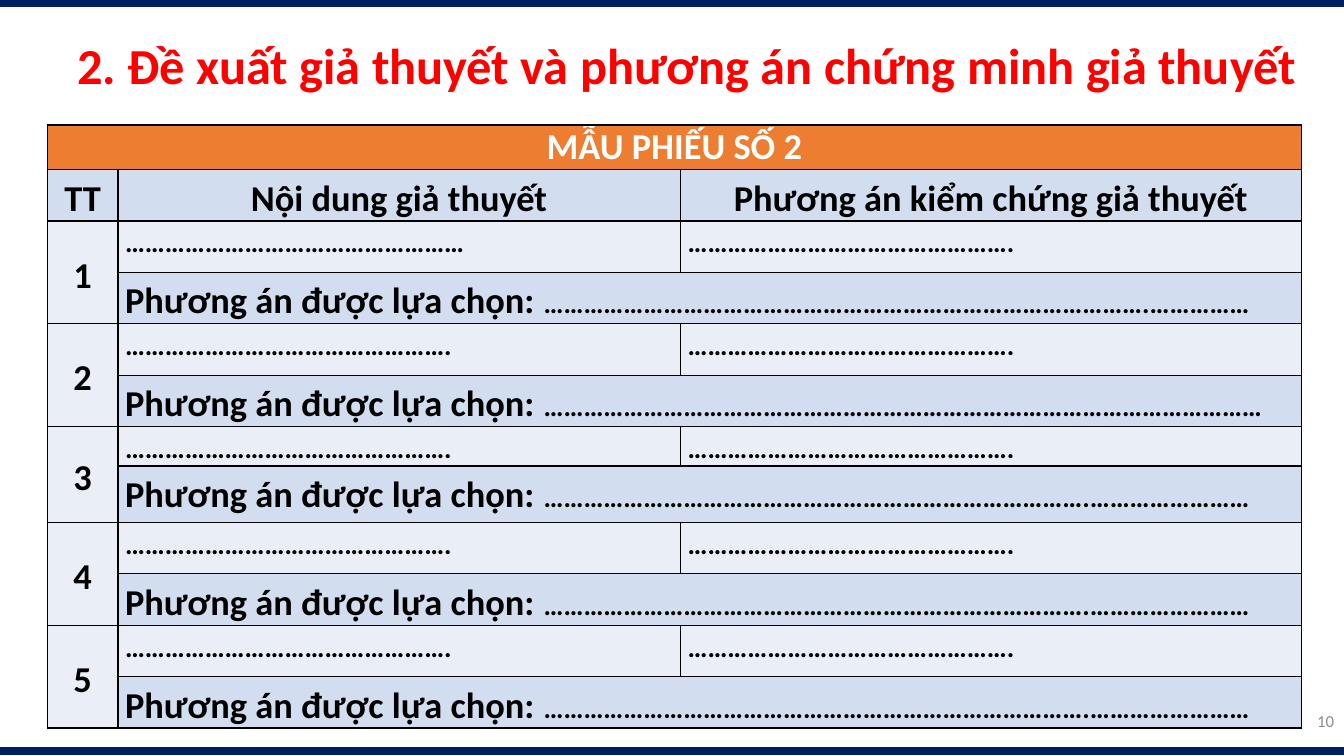
from dataclasses import dataclass

from lxml.etree import SubElement
from pptx import Presentation
from pptx.dml.color import RGBColor
from pptx.enum.shapes import MSO_CONNECTOR as Connector
from pptx.enum.text import MSO_ANCHOR as Anchor, MSO_AUTO_SIZE as AutoSize, PP_ALIGN as Align
from pptx.oxml import parse_xml
from pptx.oxml.ns import nsdecls, qn
from pptx.util import Inches, Pt

NAVY = RGBColor(0x00, 0x20, 0x60)
RED = RGBColor(0xFF, 0x00, 0x00)
ORANGE = RGBColor(0xED, 0x7D, 0x31)
HEADER_BLUE = RGBColor(0xD2, 0xDE, 0xEF)
PALE_BLUE = RGBColor(0xEA, 0xEF, 0xF7)
GRAY = RGBColor(0x8C, 0x8C, 0x8C)
BLACK = RGBColor(0x00, 0x00, 0x00)
WHITE = RGBColor(0xFF, 0xFF, 0xFF)

SLIDE_WIDTH, SLIDE_HEIGHT = 13.33, 7.5
TABLE_LEFT, TABLE_TOP = 0.47, 1.24
COLUMN_WIDTHS = (0.7, 5.58, 6.16)
TABLE_RIGHT = TABLE_LEFT + sum(COLUMN_WIDTHS)
ROW_HEIGHTS = (0.44, *[0.51] * 5, 0.39, 0.56, *[0.51] * 4)
HEADERS = ("TT", "Nội dung giả thuyết", "Phương án kiểm chứng giả thuyết")
CHOICE_LABEL = "Phương án được lựa chọn: "
BLANK = "…………………………………………."
CHOICE_BLANK = "……………………………………………………………………….……………………"


@dataclass(frozen=True)
class Run:
    text: str
    size: float = 26
    color: RGBColor = BLACK
    bold: bool = True


@dataclass(frozen=True)
class Hypothesis:
    content: str = BLANK
    choice: str = CHOICE_BLANK


HYPOTHESES = (
    Hypothesis("……………………………………………",
               "……………………………………………………………………………….……………"),
    Hypothesis(choice="………………………………………………………………………………………………"),
    Hypothesis(),
    Hypothesis(),
    Hypothesis(),
)


def write(text_frame, runs: list[Run], align: Align, spacing: float = 1.0) -> None:
    paragraph = text_frame.paragraphs[0]
    paragraph.alignment = align
    paragraph.line_spacing = spacing
    for item in runs:
        run = paragraph.add_run()
        run.text = item.text
        font_format = {"name": "Calibri", "size": Pt(item.size), "bold": item.bold}
        for name, value in font_format.items():
            setattr(run.font, name, value)
        run.font.color.rgb = item.color


def place(shape, left: float, top: float, width: float, height: float) -> None:
    box = {"left": left, "top": top, "width": width, "height": height}
    for name, value in box.items():
        setattr(shape, name, Inches(value))
    frame_format = {"word_wrap": True, "auto_size": AutoSize.NONE,
                    "vertical_anchor": Anchor.MIDDLE}
    for name, value in frame_format.items():
        setattr(shape.text_frame, name, value)


def add_edge_line(slide, y: float) -> None:
    line = slide.shapes.add_connector(
        Connector.STRAIGHT, Inches(0), Inches(y), Inches(SLIDE_WIDTH), Inches(y))
    line.line.color.rgb = NAVY
    line.line.width = Pt(6)
    SubElement(line._element.spPr, qn("a:effectLst"))


def style_cell(cell, fill: RGBColor) -> None:
    """Fill the cell, set its margins and draw black borders."""
    cell.fill.solid()
    cell.fill.fore_color.rgb = fill
    cell_format = {"margin_left": Inches(0.07), "margin_right": Inches(0.07),
                   "margin_top": 0, "margin_bottom": 0}
    for name, value in cell_format.items():
        setattr(cell, name, value)
    properties = cell._tc.get_or_add_tcPr()
    for index, side in enumerate(("lnL", "lnR", "lnT", "lnB")):
        properties.insert(index, parse_xml(
            f'<a:{side} {nsdecls("a")} w="{Pt(1)}"><a:solidFill>'
            f'<a:srgbClr val="{BLACK}"/></a:solidFill></a:{side}>'))


def write_centered(cell, text: str) -> None:
    cell.vertical_anchor = Anchor.MIDDLE
    write(cell.text_frame, [Run(text)], Align.CENTER, 1.15)


def row_fill(row: int) -> RGBColor:
    if row == 0:
        return ORANGE
    return HEADER_BLUE if row % 2 else PALE_BLUE


def add_worksheet(slide) -> None:
    table = slide.shapes.add_table(
        len(ROW_HEIGHTS), len(COLUMN_WIDTHS), Inches(TABLE_LEFT), Inches(TABLE_TOP),
        Inches(sum(COLUMN_WIDTHS)), Inches(sum(ROW_HEIGHTS))).table
    table.first_row = table.horz_banding = False
    for column, width in zip(table.columns, COLUMN_WIDTHS):
        column.width = Inches(width)
    for index, height in enumerate(ROW_HEIGHTS):
        table.rows[index].height = Inches(height)
        for column in range(len(COLUMN_WIDTHS)):
            number_cell = column == 0 and index > 1
            style_cell(table.cell(index, column),
                       PALE_BLUE if number_cell else row_fill(index))

    table.cell(0, 0).merge(table.cell(0, 2))
    write(table.cell(0, 0).text_frame, [Run("MẪU PHIẾU SỐ 2", color=WHITE)], Align.CENTER)
    for column, header in enumerate(HEADERS):
        write_centered(table.cell(1, column), header)

    for number, hypothesis in enumerate(HYPOTHESES, start=1):
        top = 2 * number
        table.cell(top, 0).merge(table.cell(top + 1, 0))
        table.cell(top + 1, 1).merge(table.cell(top + 1, 2))
        write_centered(table.cell(top, 0), str(number))
        answers = (
            (top, 1, [Run(hypothesis.content, 20)]),
            (top, 2, [Run(BLANK, 20)]),
            (top + 1, 1, [Run(CHOICE_LABEL), Run(hypothesis.choice, 20)]),
        )
        for row, column, runs in answers:
            write(table.cell(row, column).text_frame, runs, Align.JUSTIFY, 1.15)


def main() -> None:
    presentation = Presentation()
    presentation.slide_width = Inches(SLIDE_WIDTH)
    presentation.slide_height = Inches(SLIDE_HEIGHT)
    slide = presentation.slides.add_slide(presentation.slide_layouts[5])

    for y in (7.45, 0.03):
        add_edge_line(slide, y)

    title = slide.shapes.title
    place(title, 0.3, 0.32, 13.03, 0.71)
    heading = "2. Đề xuất giả thuyết và phương án chứng minh giả thuyết"
    write(title.text_frame, [Run(heading, 36, RED)], Align.CENTER, 0.9)

    add_worksheet(slide)

    page_number = slide.shapes.add_textbox(0, 0, 0, 0)
    place(page_number, TABLE_RIGHT, 6.95, SLIDE_WIDTH - TABLE_RIGHT, 0.4)
    write(page_number.text_frame, [Run("10", 12, GRAY, False)], Align.RIGHT)

    presentation.save("out.pptx")


if __name__ == "__main__":
    main()
